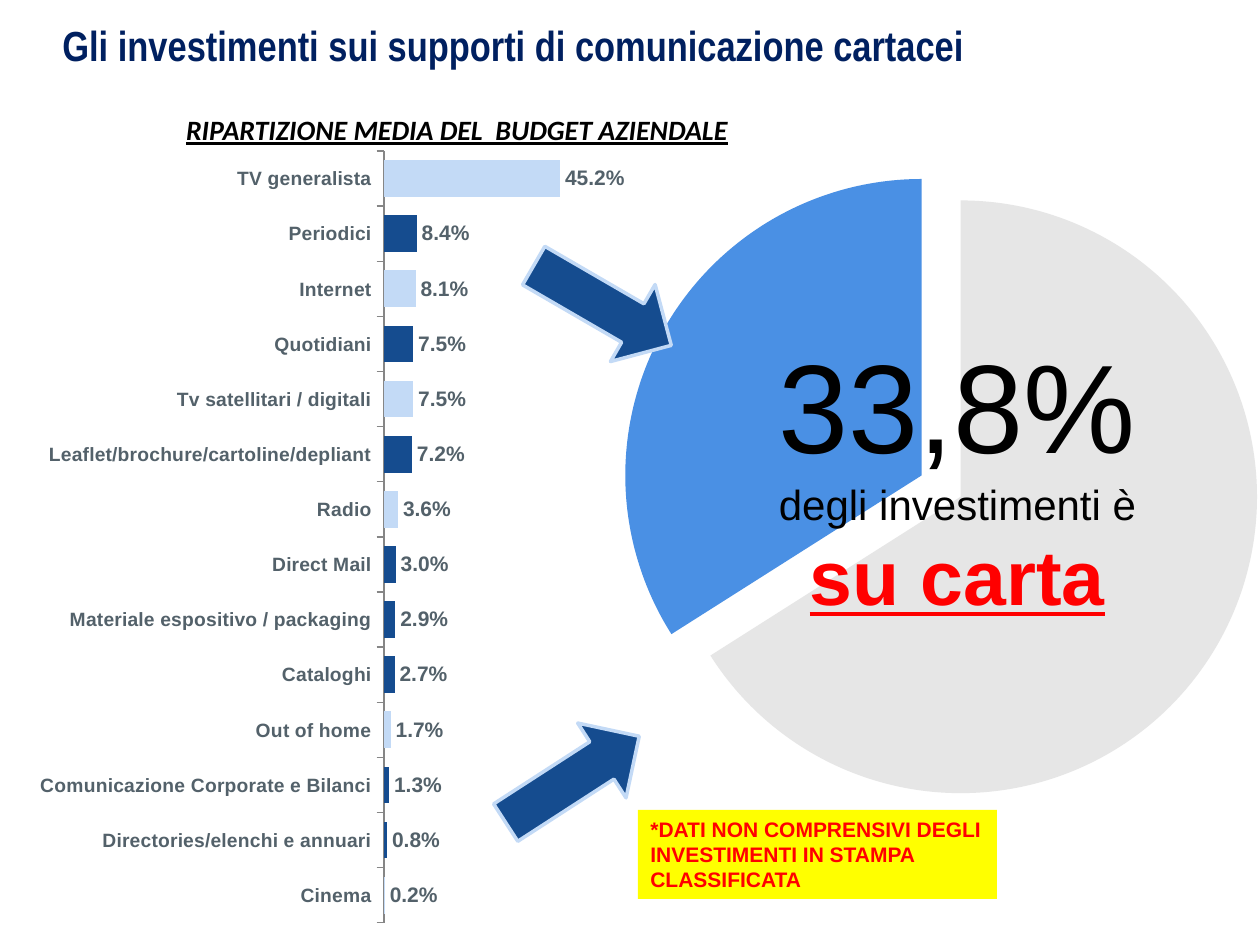
from dataclasses import dataclass

from lxml import etree
from pptx import Presentation
from pptx.chart.data import CategoryChartData
from pptx.dml.color import RGBColor
from pptx.enum.chart import XL_CHART_TYPE, XL_LABEL_POSITION, XL_TICK_LABEL_POSITION, XL_TICK_MARK
from pptx.enum.shapes import MSO_SHAPE
from pptx.enum.text import MSO_AUTO_SIZE, MSO_VERTICAL_ANCHOR, PP_ALIGN
from pptx.oxml.ns import qn
from pptx.util import Emu, Pt

EMU_PER_PX = 914400 / 126
BAR, PIE = XL_CHART_TYPE.BAR_CLUSTERED, XL_CHART_TYPE.PIE
OUTSIDE, NO_TICK_LABELS = XL_TICK_MARK.OUTSIDE, XL_TICK_LABEL_POSITION.NONE
LOW, OUTSIDE_END = XL_TICK_LABEL_POSITION.LOW, XL_LABEL_POSITION.OUTSIDE_END
RECTANGLE, RIGHT_ARROW = MSO_SHAPE.RECTANGLE, MSO_SHAPE.RIGHT_ARROW
LEFT, CENTER = PP_ALIGN.LEFT, PP_ALIGN.CENTER
TOP, GROW = MSO_VERTICAL_ANCHOR.TOP, MSO_AUTO_SIZE.SHAPE_TO_FIT_TEXT

NAVY, DARK, PALE, BLUE = "002060", "154C8F", "C3DAF6", "4A90E4"
LIGHT_GREY, AXIS_GREY, LABEL_GREY = "E6E6E6", "868686", "53616A"
BLACK, RED, YELLOW = "000000", "FF0000", "FFFF00"


@dataclass
class Area:
    left: int
    top: int
    width: int
    height: int

    def emu(self) -> list[Emu]:
        return [px(n) for n in (self.left, self.top, self.width, self.height)]


@dataclass
class Medium:
    name: str
    share: float
    on_paper: bool


@dataclass
class Arrow:
    area: Area
    rotation: float


MEDIA = [
    Medium("TV generalista", 0.452, False),
    Medium("Periodici", 0.084, True),
    Medium("Internet", 0.081, False),
    Medium("Quotidiani", 0.075, True),
    Medium("Tv satellitari / digitali", 0.075, False),
    Medium("Leaflet/brochure/cartoline/depliant", 0.072, True),
    Medium("Radio", 0.036, False),
    Medium("Direct Mail", 0.03, True),
    Medium("Materiale espositivo / packaging", 0.029, True),
    Medium("Cataloghi", 0.027, True),
    Medium("Out of home", 0.017, False),
    Medium("Comunicazione Corporate e Bilanci", 0.013, True),
    Medium("Directories/elenchi e annuari", 0.008, True),
    Medium("Cinema", 0.002, False),
]
ARROWS = [Arrow(Area(523, 261, 159, 89), 30.1), Arrow(Area(493, 735, 159, 89), 327.1)]


def px(count: int) -> Emu:
    return Emu(round(count * EMU_PER_PX))


def color(value: str) -> RGBColor:
    return RGBColor.from_string(value)


def fill(target, value: str) -> None:
    target.fill.solid()
    target.fill.fore_color.rgb = color(value)


def style_font(font, *, size, value=BLACK, name="Arial", bold=False, italic=False, underline=False):
    font.size, font.name = Pt(size), name
    font.bold, font.italic, font.underline = bold, italic, underline
    font.color.rgb = color(value)


def add_text(para, text: str, **style) -> None:
    span = para.add_run()
    span.text = text
    style_font(span.font, **style)


def prepare_text(box, align=LEFT):
    """Set up the text frame and return its first paragraph."""
    frame = box.text_frame
    frame.word_wrap, frame.auto_size, frame.vertical_anchor = True, GROW, TOP
    para = frame.paragraphs[0]
    para.alignment = align
    return para


def place_plot(chart, **fractions: float) -> None:
    """Fix the inner plot area as fractions x, y, w and h of the chart."""
    plot_area = chart._chartSpace.chart.plotArea
    for old in plot_area.findall(qn("c:layout")):
        plot_area.remove(old)
    layout = etree.Element(qn("c:layout"))
    manual = etree.SubElement(layout, qn("c:manualLayout"))
    settings = {"layoutTarget": "inner", "xMode": "edge", "yMode": "edge", **fractions}
    for tag, value in settings.items():
        etree.SubElement(manual, qn(f"c:{tag}")).set("val", str(value))
    plot_area.insert(0, layout)


def add_chart(page, kind, area: Area, categories: list[str], values: list[float], colors: list[str]):
    data = CategoryChartData()
    data.categories = categories
    data.add_series("Series 1", values)
    chart = page.shapes.add_chart(kind, *area.emu(), data).chart
    chart.has_legend = chart.has_title = False
    style_font(chart.font, size=18, value=LABEL_GREY)
    plot = chart.plots[0]
    plot.vary_by_categories = False
    for index, value in enumerate(colors):
        fill(plot.series[0].points[index].format, value)
    return chart


def add_budget_bars(page) -> None:
    chart = add_chart(
        page, BAR, Area(25, 135, 764, 804),
        [medium.name for medium in MEDIA],
        [medium.share for medium in MEDIA],
        [DARK if medium.on_paper else PALE for medium in MEDIA],
    )
    place_plot(chart, x=0.47, y=0.02, w=0.51, h=0.96)
    plot = chart.plots[0]
    plot.gap_width = 50
    plot.has_data_labels = True
    labels = plot.data_labels
    labels.show_value, labels.position = True, OUTSIDE_END
    labels.number_format, labels.number_format_is_linked = "0.0%", False
    style_font(labels.font, size=12, value=LABEL_GREY, bold=True)

    names = chart.category_axis
    names.reverse_order = True
    names.major_tick_mark, names.tick_label_position = OUTSIDE, LOW
    names.format.line.color.rgb = color(AXIS_GREY)
    style_font(names.tick_labels.font, size=11, value=LABEL_GREY, bold=True)

    shares = chart.value_axis
    shares.minimum_scale, shares.maximum_scale = 0, 1
    shares.has_major_gridlines = False
    shares.major_tick_mark, shares.tick_label_position = OUTSIDE, NO_TICK_LABELS
    shares.format.line.fill.background()


def add_paper_pie(page) -> None:
    chart = add_chart(page, PIE, Area(491, 175, 912, 625), ["1", "2"], [66, 34], [LIGHT_GREY, BLUE])
    place_plot(chart, x=0.19, y=0.04, w=0.65, h=0.95)
    paper_slice = chart._chartSpace.findall(".//" + qn("c:dPt"))[1]
    explosion = etree.Element(qn("c:explosion"))
    explosion.set("val", "15")
    paper_slice.find(qn("c:spPr")).addprevious(explosion)


def add_arrow(page, arrow: Arrow) -> None:
    shape = page.shapes.add_shape(RIGHT_ARROW, *arrow.area.emu())
    shape.shadow.inherit = False
    shape.rotation = arrow.rotation
    fill(shape, DARK)
    shape.line.color.rgb, shape.line.width = color(PALE), Pt(2)


def main() -> None:
    deck = Presentation()
    deck.slide_width, deck.slide_height = px(1260), px(945)
    page = deck.slides.add_slide(deck.slide_layouts[6])

    title = page.shapes.add_textbox(*Area(50, 13, 1099, 63).emu())
    add_text(prepare_text(title), "Gli investimenti sui supporti di comunicazione cartacei",
             size=24, value=NAVY, name="Arial Narrow", bold=True)

    add_budget_bars(page)
    add_paper_pie(page)
    for arrow in ARROWS:
        add_arrow(page, arrow)

    result = page.shapes.add_textbox(*Area(581, 321, 753, 310).emu())
    add_text(prepare_text(result, CENTER), "33,8%", size=72)
    para = result.text_frame.add_paragraph()
    para.alignment = CENTER
    add_text(para, "degli investimenti è", size=24)
    para.add_line_break()
    add_text(para, "su carta", size=44, value=RED, bold=True, underline=True)

    note = page.shapes.add_shape(RECTANGLE, *Area(638, 810, 359, 89).emu())
    note.shadow.inherit = False
    fill(note, YELLOW)
    note.line.fill.background()
    add_text(prepare_text(note), "*DATI NON COMPRENSIVI DEGLI INVESTIMENTI IN STAMPA CLASSIFICATA",
             size=12, value=RED, bold=True)

    heading = page.shapes.add_textbox(*Area(123, 106, 668, 47).emu())
    add_text(prepare_text(heading, CENTER), "RIPARTIZIONE MEDIA DEL  BUDGET AZIENDALE",
             size=16, name="Calibri", bold=True, italic=True, underline=True)

    deck.save("out.pptx")


if __name__ == "__main__":
    main()
